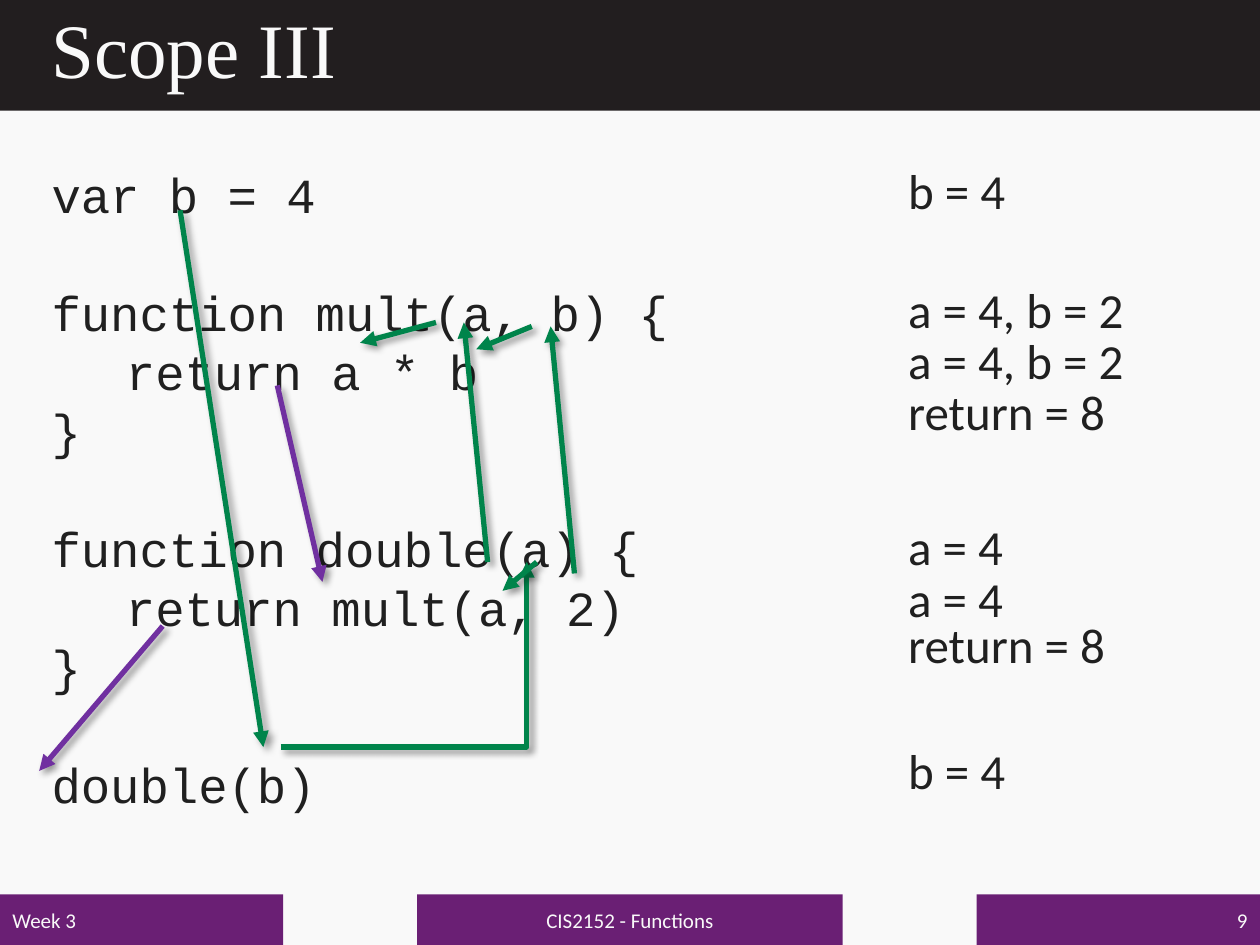
from lxml import etree
from pptx import Presentation
from pptx.dml.color import RGBColor
from pptx.enum.shapes import MSO_CONNECTOR, MSO_SHAPE
from pptx.enum.text import MSO_ANCHOR, PP_ALIGN
from pptx.oxml import parse_xml
from pptx.oxml.ns import nsdecls, qn
from pptx.util import Cm, Pt

RECTANGLE = MSO_SHAPE.RECTANGLE
STRAIGHT, ELBOW = MSO_CONNECTOR.STRAIGHT, MSO_CONNECTOR.ELBOW
MIDDLE, TOP = MSO_ANCHOR.MIDDLE, MSO_ANCHOR.TOP
LEFT, CENTER, RIGHT = PP_ALIGN.LEFT, PP_ALIGN.CENTER, PP_ALIGN.RIGHT

PAPER, INK, BLACK = "F9F9F9", "202020", "221E1F"
PLUM, GREEN, PURPLE = "6A1F74", "00844B", "7030A0"
CODE_LINE = Pt(33.7)

# Code lines: text, indented, blank line before
CODE = [
    ("var b = 4", False, False),
    ("function mult(a, b) {", False, True),
    ("return a * b", True, False),
    ("}", False, False),
    ("function double(a) {", False, True),
    ("return mult(a, 2)", True, False),
    ("}", False, False),
    ("double(b)", False, True),
]

# Values in scope: text, top, width
VALUES = [
    ("b = 4", 3.12, 2.49),
    ("a = 4, b = 2", 5.51, 4.9),
    ("a = 4, b = 2", 6.53, 4.9),
    ("return = 8", 7.57, 4.52),
    ("a = 4", 10.29, 2.44),
    ("a = 4", 11.33, 2.44),
    ("return = 8", 12.27, 4.52),
    ("b = 4", 14.81, 2.49),
]

# Arrows: kind, start, end, colour
ARROWS = [
    (STRAIGHT, (3.63, 4.24), (5.31, 15.06), GREEN),
    (ELBOW, (5.66, 15.06), (10.62, 11.33), GREEN),
    (STRAIGHT, (10.82, 11.33), (10.13, 11.91), GREEN),
    (STRAIGHT, (11.58, 11.56), (11.1, 6.58), GREEN),
    (STRAIGHT, (9.83, 11.33), (9.35, 6.5), GREEN),
    (STRAIGHT, (10.72, 6.58), (9.6, 7.04), GREEN),
    (STRAIGHT, (8.79, 6.5), (7.26, 6.91), GREEN),
    (STRAIGHT, (5.59, 7.77), (6.5, 11.73), PURPLE),
    (STRAIGHT, (3.28, 12.62), (0.79, 15.54), PURPLE),
]


def colour(hex_string):
    return RGBColor.from_string(hex_string)


def add_span(para, text, size, font, ink):
    span = para.add_run()
    span.text = text
    span.font.size = Pt(size)
    span.font.name = font
    span.font.color.rgb = colour(ink)


def add_bar(page, left, top, width, height, fill):
    bar = page.shapes.add_shape(RECTANGLE, Cm(left), Cm(top), Cm(width), Cm(height))
    bar.shadow.inherit = False
    bar.fill.solid()
    bar.fill.fore_color.rgb = colour(fill)
    bar.line.fill.background()
    return bar


def add_text_box(page, left, top, width, height, wrap=True, anchor=TOP):
    box = page.shapes.add_textbox(Cm(left), Cm(top), Cm(width), Cm(height))
    box.text_frame.word_wrap = wrap
    box.text_frame.vertical_anchor = anchor
    return box.text_frame


def add_footer(page, text, left, width, align):
    frame = add_bar(page, left, 18.03, width, 1.02, PLUM).text_frame
    frame.vertical_anchor = MIDDLE
    para = frame.paragraphs[0]
    para.alignment = align
    add_span(para, text, 12, "Calibri", PAPER)


def add_code(page):
    frame = add_text_box(page, 0.79, 3.12, 13.23, 13.41)
    frame.margin_top = Cm(0.2)
    for index, (text, indented, gap) in enumerate(CODE):
        para = frame.add_paragraph() if index else frame.paragraphs[0]
        para.line_spacing = CODE_LINE
        if gap:
            para.space_before = CODE_LINE
        if indented:
            para._p.get_or_add_pPr().set("marL", str(Cm(1.5)))
        add_span(para, text, 28, "Courier New", INK)


def add_arrow(page, kind, start, end, ink):
    points = [Cm(value) for value in (*start, *end)]
    arrow = page.shapes.add_connector(kind, *points)
    arrow.line.width = Pt(3)
    arrow.line.color.rgb = colour(ink)
    # Arrowhead
    line = arrow.line._get_or_add_ln()
    etree.SubElement(line, qn("a:tailEnd"), type="triangle")
    # Soft shadow
    properties = arrow._element.spPr
    properties.append(parse_xml(
        f'<a:effectLst {nsdecls("a")}>'
        f'<a:outerShdw blurRad="{Pt(4)}" dist="{Pt(3)}" dir="2700000">'
        '<a:srgbClr val="000000"><a:alpha val="40000"/></a:srgbClr>'
        '</a:outerShdw></a:effectLst>'))
    # The elbow turns at its far end
    if kind == ELBOW:
        geometry = properties.find(qn("a:prstGeom"))
        guides = geometry.find(qn("a:avLst"))
        if guides is None:
            guides = etree.SubElement(geometry, qn("a:avLst"))
        etree.SubElement(guides, qn("a:gd"), name="adj1", fmla="val 100000")


def main():
    deck = Presentation()
    deck.slide_width, deck.slide_height = Cm(25.4), Cm(19.05)
    page = deck.slides.add_slide(deck.slide_layouts[6])
    page.background.fill.solid()
    page.background.fill.fore_color.rgb = colour(PAPER)

    # Title
    add_bar(page, 0, 0, 25.4, 2.23, BLACK)
    title = add_text_box(page, 0.79, 0, 23.85, 2.18, anchor=MIDDLE).paragraphs[0]
    title.line_spacing = 0.9
    add_span(title, "Scope III", 44, "Times New Roman", PAPER)

    # Footer
    add_footer(page, "Week 3", 0, 5.71, LEFT)
    add_footer(page, "CIS2152 - Functions", 8.41, 8.58, CENTER)
    add_footer(page, "9", 19.69, 5.71, RIGHT)

    # Code, values and the arrows between them
    add_code(page)
    for text, top, width in VALUES:
        frame = add_text_box(page, 18.06, top, width, 1.45, wrap=False)
        add_span(frame.paragraphs[0], text, 28, "Calibri", INK)
    for arrow in ARROWS:
        add_arrow(page, *arrow)

    deck.save("out.pptx")


if __name__ == "__main__":
    main()
